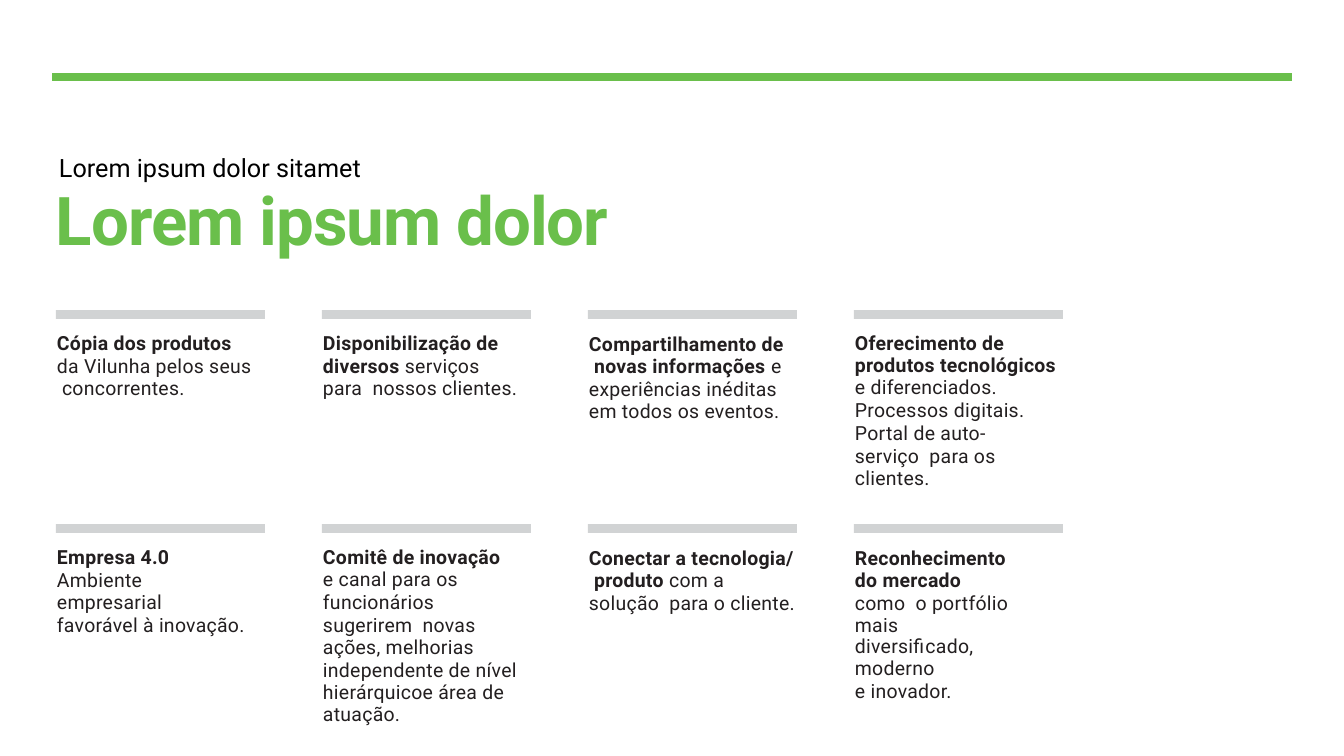
from dataclasses import dataclass

from lxml.etree import SubElement
from pptx import Presentation
from pptx.dml.color import RGBColor
from pptx.enum.shapes import MSO_CONNECTOR, MSO_SHAPE
from pptx.enum.text import MSO_ANCHOR, MSO_AUTO_SIZE
from pptx.oxml.ns import qn
from pptx.slide import Slide
from pptx.text.text import TextFrame, _Paragraph, _Run
from pptx.util import Emu, Pt

EMU_PER_PX = 914400 / 100.8


@dataclass(frozen=True)
class Theme:
    font: str = "Roboto"
    green: RGBColor = RGBColor(0x6A, 0xBF, 0x4B)
    grey: RGBColor = RGBColor(0xD1, 0xD3, 0xD4)
    ink: RGBColor = RGBColor(0x23, 0x1F, 0x20)
    black: RGBColor = RGBColor(0, 0, 0)
    title_size: float = 48
    subtitle_size: float = 18
    body_size: float = 13.9
    rule_weight: float = 6


@dataclass(frozen=True)
class Passage:
    strong: str = ""
    plain: str = ""
    leading: float = 16
    before: float = 0
    right_margin: int = 0


@dataclass(frozen=True)
class Topic:
    width: int
    height: int
    inset: int
    passages: tuple[Passage, ...]


THEME = Theme()
COLUMNS = 4
GRID_LEFT, GRID_TOP = 56, 310
COLUMN_PITCH, ROW_PITCH = 266, 214
BAR_WIDTH, BAR_HEIGHT = 209, 9
TEXT_OFFSET = 19

TOPICS = (
    Topic(196, 71, 2, (
        Passage("Cópia dos produtos", leading=16.4),
        Passage(plain="da Vilunha pelos seus  concorrentes.", before=0.8),
    )),
    Topic(199, 71, 2, (
        Passage("Disponibilização de", leading=16.4),
        Passage("diversos ", "serviços para  nossos clientes.", before=0.8),
    )),
    Topic(201, 93, 4, (
        Passage("Compartilhamento de\v novas informações ",
                "e experiências inéditas em todos os eventos."),
    )),
    Topic(207, 138, 2, (
        Passage("Oferecimento de", leading=16.4),
        Passage("produtos tecnológicos"),
        Passage(plain="e diferenciados."),
        Passage(plain="Processos digitais."),
        Passage(plain="Portal de auto-serviço  para os clientes.", before=0.8, right_margin=34),
    )),
    Topic(196, 71, 2, (
        Passage("Empresa 4.0", leading=16.4),
        Passage(plain="Ambiente\vempresarial\vfavorável à inovação.", before=0.8),
    )),
    Topic(206, 160, 2, (
        Passage("Comitê de inovação", leading=16.4),
        Passage(plain="e canal para os"),
        Passage(plain="funcionários sugerirem  novas ações, melhorias "
                      "independente de nível hierárquicoe área de", before=0.8),
        Passage(plain="atuação.", leading=15.6),
    )),
    Topic(212, 71, 4, (
        Passage("Conectar a tecnologia/\v produto ",
                "com a solução  para o cliente."),
    )),
    Topic(204, 114, 4, (
        Passage("Reconhecimento\vdo mercado\v", "como  o portfólio\vmais"),
        Passage(plain="diversificado,\vmoderno", leading=15.2),
        Passage(plain="e inovador.", leading=16.4),
    )),
)


def px(length: int) -> Emu:
    return Emu(round(length * EMU_PER_PX))


def style_run(run: _Run, size: float, color: RGBColor, bold: bool, tracking: int = 0) -> None:
    run.font.name = THEME.font
    run.font.size = Pt(size)
    run.font.color.rgb = color
    run.font.bold = bold
    if tracking:
        run.font._element.set("spc", str(tracking))


def add_text_frame(slide: Slide, left: int, top: int, width: int, height: int,
                   side_inset: int, top_inset: int, bottom_inset: int = 0) -> TextFrame:
    frame = slide.shapes.add_textbox(px(left), px(top), px(width), px(height)).text_frame
    frame.word_wrap = True
    frame.auto_size = MSO_AUTO_SIZE.SHAPE_TO_FIT_TEXT
    frame.margin_left = frame.margin_right = px(side_inset)
    frame.margin_top, frame.margin_bottom = px(top_inset), px(bottom_inset)
    return frame


def indent(paragraph: _Paragraph, left: int, right: int = 0) -> None:
    properties = paragraph._p.get_or_add_pPr()
    properties.set("marL", str(px(left)))
    properties.set("marR", str(px(right)))


def write_passage(paragraph: _Paragraph, passage: Passage) -> None:
    indent(paragraph, 1, passage.right_margin)
    paragraph.line_spacing = Pt(passage.leading)
    if passage.before:
        paragraph.space_before = Pt(passage.before)
    for words, bold in ((passage.strong, True), (passage.plain, False)):
        for number, line in enumerate(words.split("\v")):
            if number:
                paragraph.add_line_break()
            if line:
                run = paragraph.add_run()
                run.text = line
                style_run(run, THEME.body_size, THEME.ink, bold, 20)


def add_topic(slide: Slide, topic: Topic, left: int, top: int) -> None:
    bar = slide.shapes.add_shape(MSO_SHAPE.RECTANGLE, px(left), px(top),
                                 px(BAR_WIDTH), px(BAR_HEIGHT))
    bar.shadow.inherit = False
    bar.fill.solid()
    bar.fill.fore_color.rgb = THEME.grey
    bar.line.fill.background()
    frame = add_text_frame(slide, left, top + TEXT_OFFSET, topic.width, topic.height,
                           0, topic.inset)
    for number, passage in enumerate(topic.passages):
        write_passage(frame.add_paragraph() if number else frame.paragraphs[0], passage)


def add_header(slide: Slide) -> None:
    rule = slide.shapes.add_connector(MSO_CONNECTOR.STRAIGHT, px(1292), px(77), px(52), px(77))
    rule.line.color.rgb = THEME.green
    rule.line.width = Pt(THEME.rule_weight)
    SubElement(rule._element.spPr, qn("a:effectLst"))

    title = add_text_frame(slide, 55, 176, 616, 83, 0, 2)
    title.vertical_anchor = MSO_ANCHOR.MIDDLE
    title.text = "Lorem ipsum dolor"
    indent(title.paragraphs[0], 1)
    style_run(title.paragraphs[0].runs[0], THEME.title_size, THEME.green, True, -70)

    subtitle = add_text_frame(slide, 49, 147, 367, 40, 10, 5, 5)
    subtitle.text = "Lorem ipsum dolor sitamet"
    style_run(subtitle.paragraphs[0].runs[0], THEME.subtitle_size, THEME.black, False)


def main() -> None:
    presentation = Presentation()
    presentation.slide_width, presentation.slide_height = px(1344), px(756)
    slide = presentation.slides.add_slide(presentation.slide_layouts[6])
    add_header(slide)
    for number, topic in enumerate(TOPICS):
        row, column = divmod(number, COLUMNS)
        add_topic(slide, topic, GRID_LEFT + column * COLUMN_PITCH, GRID_TOP + row * ROW_PITCH)
    presentation.save("out.pptx")


if __name__ == "__main__":
    main()
